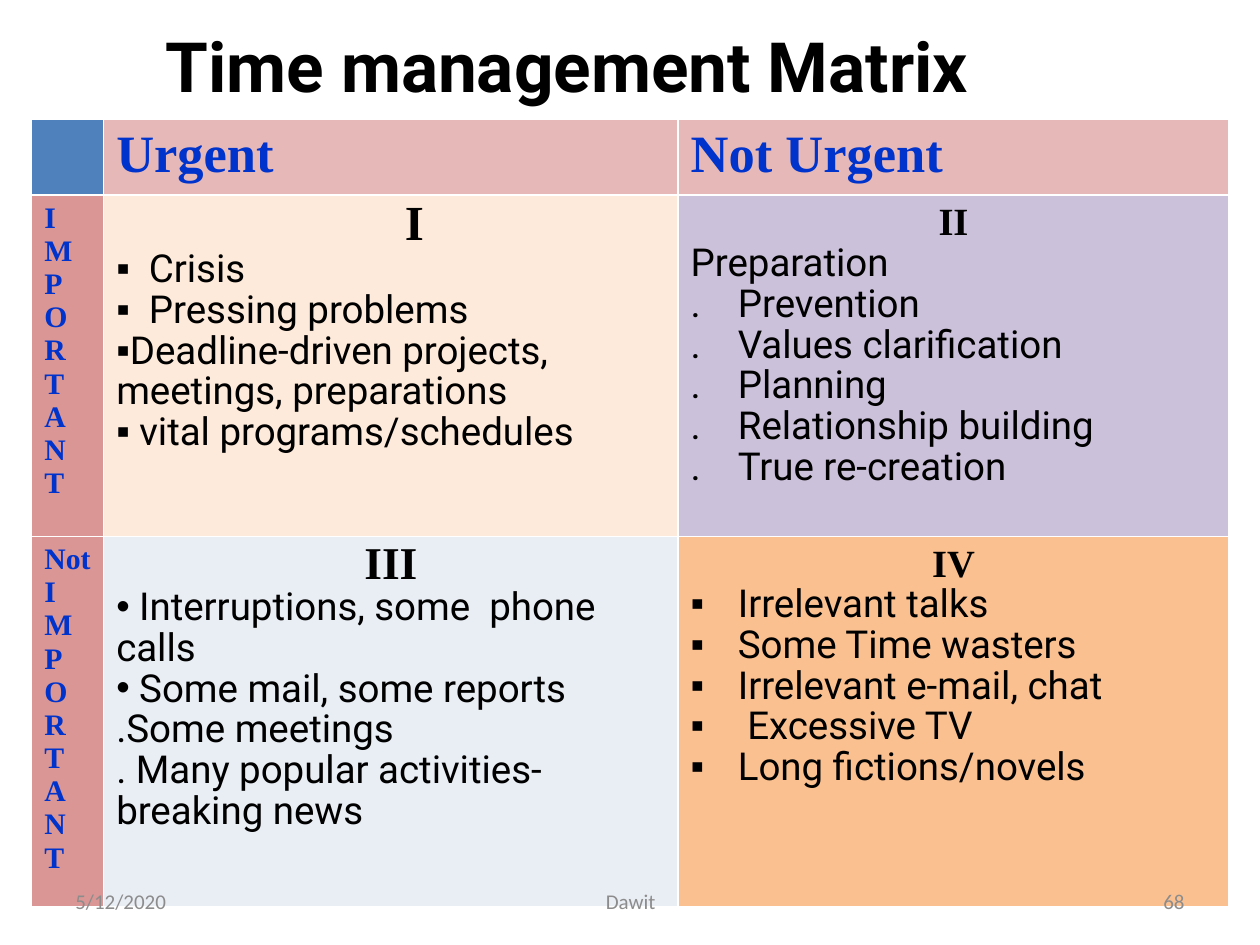
from pptx import Presentation
from pptx.dml.color import RGBColor
from pptx.enum.text import MSO_ANCHOR, PP_ALIGN
from pptx.oxml.ns import qn
from pptx.util import Cm, Pt
from lxml.etree import SubElement

THEME = {
    "head": "Times New Roman", "body": "Roboto", "foot": "Calibri",
    "black": "000000", "blue": "0033CC", "grey": "8C8C8C",
    "corner": "4F81BD", "top": "E6B9B8", "side": "D99694",
    "title": 39.6, "label": 30, "letter": 17, "text": 22, "small": 12,
}
TITLE = "Time management Matrix"
LABELS = ["Urgent", "Not Urgent"]
SIDES = [list("IMPORTANT"), ["Not", *"IMPORTANT"]]
TAB = 0.95  # cm, tab stop and hanging indent

# Each quadrant: heading, heading size, fill, hanging indent, (bullet, text) lines
QUADS = [
    [
        ("\tI", 28, "FDEADA", False, [
            ("▪", "  Crisis"),
            ("▪", "  Pressing problems"),
            ("▪", "Deadline-driven projects, \tmeetings, preparations"),
            ("▪", " vital programs/schedules"),
        ]),
        ("II", 22, "CCC1DA", False, [
            ("", "Preparation"),
            ("", ". \tPrevention"),
            ("", ". \tValues clarification"),
            ("", ". \tPlanning"),
            ("", ". \tRelationship building"),
            ("", ". \tTrue re-creation"),
        ]),
    ],
    [
        ("III", 26, "E9EDF4", False, [
            ("•", " Interruptions, some  phone calls"),
            ("•", " Some mail, some reports"),
            ("", ".Some meetings"),
            ("", ". Many popular activities- breaking news"),
        ]),
        ("IV", 22, "FAC090", True, [
            ("▪", "Irrelevant talks"),
            ("▪", "Some Time wasters"),
            ("▪", "Irrelevant e-mail, chat"),
            ("▪", " Excessive TV"),
            ("▪", "Long fictions/novels"),
        ]),
    ],
]
FOOT = [  # text, left, width, alignment
    ("5/12/2020", 1.27, 5.92, PP_ALIGN.LEFT),
    ("Dawit", 8.69, 8.05, PP_ALIGN.CENTER),
    ("68", 18.21, 5.92, PP_ALIGN.RIGHT),
]
COLS = [1.45, 11.58, 11.1]
ROWS = [1.5, 6.88, 7.34]


def style(para, font, size, color, bold=False, align=PP_ALIGN.LEFT):
    para.alignment = align
    for run in para.runs:
        face = run.font
        face.name, face.size, face.bold = THEME[font], Pt(size), bold
        face.color.rgb = RGBColor.from_string(THEME[color])


def add_text(slide, text, box, *look):
    shape = slide.shapes.add_textbox(*(Cm(n) for n in box))
    frame = shape.text_frame
    frame.word_wrap = True
    frame.vertical_anchor = MSO_ANCHOR.MIDDLE
    frame.text = text
    style(frame.paragraphs[0], *look)


def paint(cell, color):
    cell.fill.solid()
    cell.fill.fore_color.rgb = RGBColor.from_string(color)


def set_list(para, mark, hang):
    """Give a paragraph its bullet, and a hanging indent or a tab stop."""
    props = para._p.get_or_add_pPr()
    if mark:
        SubElement(props, qn("a:buFont"), typeface="Arial")
        SubElement(props, qn("a:buChar"), char=mark)
    if hang:
        props.set("marL", str(Cm(TAB)))
        props.set("indent", str(-Cm(TAB)))
    else:
        tabs = SubElement(props, qn("a:tabLst"))
        SubElement(tabs, qn("a:tab"), pos=str(Cm(TAB)), algn="l")


def fill_label(cell, lines, size, color):
    paint(cell, THEME[color])
    cell.text_frame.text = "\n".join(lines)
    for para in cell.text_frame.paragraphs:
        style(para, "head", size, "blue", True)


def fill_quad(cell, head, size, color, hang, items):
    paint(cell, color)
    cell.text_frame.text = "\n".join([head, *(text for _, text in items)])
    first, *rest = cell.text_frame.paragraphs
    style(first, "head", size, "black", True, PP_ALIGN.CENTER)
    if size > THEME["text"]:
        first.line_spacing = 0.9
    set_list(first, "", False)
    for para, (mark, _) in zip(rest, items):
        style(para, "body", THEME["text"], "black")
        para.line_spacing = 0.9
        set_list(para, mark, hang)


def main():
    deck = Presentation()
    deck.slide_width, deck.slide_height = Cm(25.4), Cm(19.05)
    slide = deck.slides.add_slide(deck.slide_layouts[6])

    add_text(slide, TITLE, (1.27, 0.64, 20.32, 1.35),
             "body", THEME["title"], "black", True, PP_ALIGN.CENTER)

    grid = slide.shapes.add_table(len(ROWS), len(COLS), Cm(0.64), Cm(2.41),
                                  Cm(sum(COLS)), Cm(sum(ROWS))).table
    grid.horz_banding = False
    for col, width in zip(grid.columns, COLS):
        col.width = Cm(width)
    for row, height in zip(grid.rows, ROWS):
        row.height = Cm(height)

    paint(grid.cell(0, 0), THEME["corner"])
    for c, label in enumerate(LABELS, 1):
        fill_label(grid.cell(0, c), [label], THEME["label"], "top")
    for r, (side, quads) in enumerate(zip(SIDES, QUADS), 1):
        fill_label(grid.cell(r, 0), side, THEME["letter"], "side")
        for c, quad in enumerate(quads, 1):
            fill_quad(grid.cell(r, c), *quad)

    for text, left, width, align in FOOT:
        add_text(slide, text, (left, 17.65, width, 1.02),
                 "foot", THEME["small"], "grey", False, align)
    deck.save("out.pptx")


if __name__ == "__main__":
    main()
